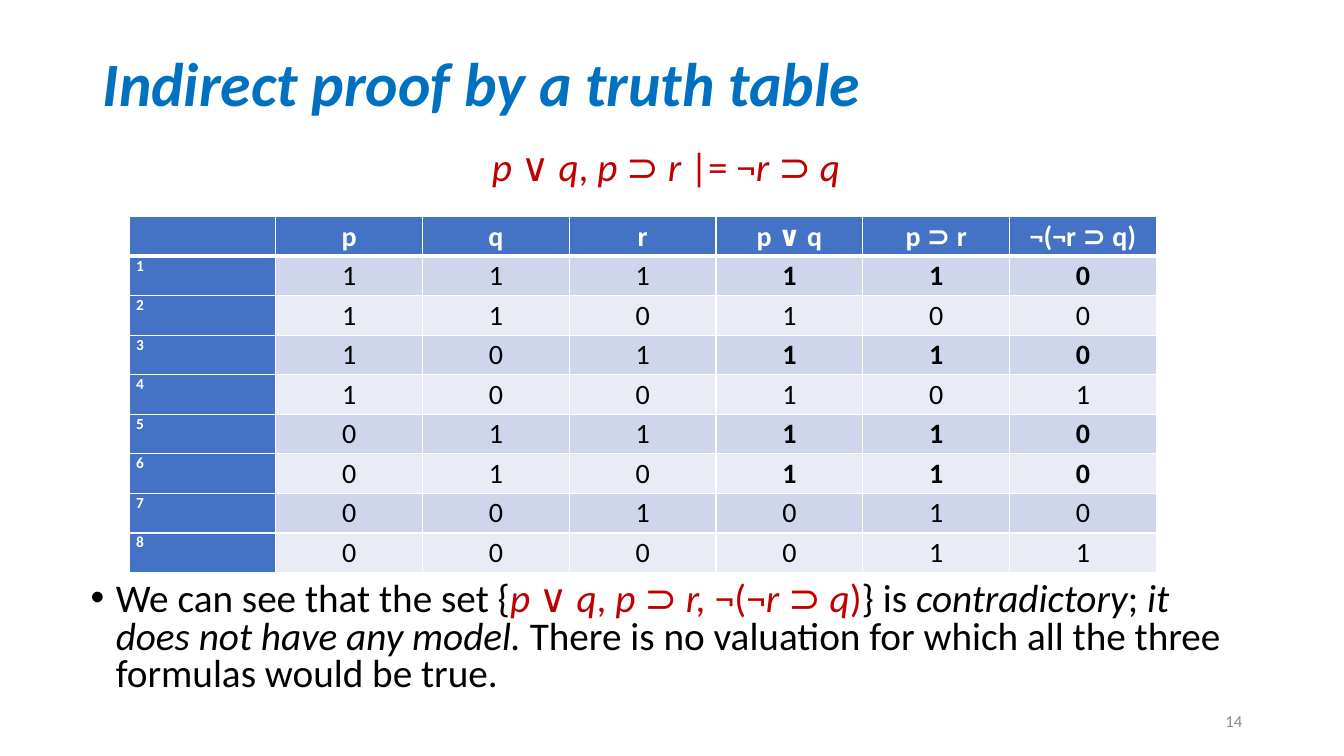
import itertools

import lxml.etree
import pptx
import pptx.dml.color
import pptx.enum.text
import pptx.oxml
import pptx.oxml.ns
import pptx.util

Inches, Pt = pptx.util.Inches, pptx.util.Pt
ALIGN, ANCHOR = pptx.enum.text.PP_ALIGN, pptx.enum.text.MSO_ANCHOR
qn = pptx.oxml.ns.qn

BLUE, RED, BLACK, WHITE = "4472C4", "C00000", "000000", "FFFFFF"
BANDS = ["CFD5EA", "E9EBF5"]


def rgb(value):
    return pptx.dml.color.RGBColor.from_string(value)


def add_text(box, parts, size, align=ALIGN.LEFT, anchor=ANCHOR.TOP, spacing=None, bold=None):
    """Fill a text box or cell from (text, colour) parts; * switches italics."""
    tf = box.text_frame
    tf.word_wrap = True
    tf.vertical_anchor = anchor
    p = tf.paragraphs[0]
    p.alignment = align
    p.line_spacing = spacing
    p.font.size = Pt(size)
    p.font.name = "Calibri"
    p.font.bold = bold
    for text, color in parts:
        for i, piece in enumerate(text.split("*")):
            if piece:
                r = p.add_run()
                r.text = piece
                r.font.italic = i % 2 == 1
                r.font.color.rgb = rgb(color)
    return p


prs = pptx.Presentation()
prs.slide_width, prs.slide_height = Inches(13.33), Inches(7.5)
s = prs.slides.add_slide(prs.slide_layouts[6])

# Title
box = s.shapes.add_textbox(Inches(0.92), Inches(0.4), Inches(11.5), Inches(0.91))
add_text(box, [("*Indirect proof by a truth table*", "0070C0")], 44,
         anchor=ANCHOR.MIDDLE, spacing=0.9, bold=True)

# Formula to prove
box = s.shapes.add_textbox(Inches(0.8), Inches(1.45), Inches(11.61), Inches(0.6))
p = add_text(box, [("*p *∨ *q*, *p *⊃ *r *|= ¬*r *⊃ *q*", RED)], 28, ALIGN.CENTER, spacing=0.8)
p.space_before = Pt(10)

# Truth table: values follow from p, q and r; rows with both premises true are bold
rows = [["", "p", "q", "r", "p ∨ q", "p ⊃ r", "¬(¬r ⊃ q)"]]
for number, (p_val, q_val, r_val) in enumerate(itertools.product((1, 0), repeat=3), 1):
    rows.append([number, p_val, q_val, r_val, p_val | q_val, (1 - p_val) | r_val,
                 (1 - r_val) & (1 - q_val)])

table = s.shapes.add_table(len(rows), len(rows[0]), Inches(1.28), Inches(2.15),
                           Inches(10.19), Inches(3.53)).table
for i, row in enumerate(rows):
    premises_hold = i > 0 and row[4] == row[5] == 1
    for j, value in enumerate(row):
        cell = table.cell(i, j)
        cell.margin_left = cell.margin_right = Inches(0.07)
        cell.margin_top = cell.margin_bottom = 0
        is_header = i == 0 or j == 0
        is_number = i > 0 and j == 0
        add_text(cell, [(str(value), WHITE if is_header else BLACK)],
                 11 if is_number else 20,
                 ALIGN.JUSTIFY if is_number else ALIGN.CENTER,
                 bold=is_header or (premises_hold and j > 3))
        cell.vertical_anchor = ANCHOR.TOP if is_number else ANCHOR.MIDDLE

        # White borders, thicker under the header row
        widths = {"lnL": 1, "lnR": 1, "lnT": 3 if i == 1 else 1, "lnB": 3 if i == 0 else 1}
        for side, width in widths.items():
            ln = lxml.etree.SubElement(cell._tc.get_or_add_tcPr(), qn("a:" + side), w=str(Pt(width)))
            fill = lxml.etree.SubElement(ln, qn("a:solidFill"))
            lxml.etree.SubElement(fill, qn("a:srgbClr"), val=WHITE)
        cell.fill.solid()
        cell.fill.fore_color.rgb = rgb(BLUE if is_header else BANDS[(i - 1) % 2])

# Conclusion
box = s.shapes.add_textbox(Inches(0.8), Inches(5.73), Inches(11.61), Inches(1.3))
p = add_text(box, [
    ("We can see that the set {", BLACK),
    ("*p *∨ *q*, *p *⊃ *r, *¬(¬*r *⊃ *q*)", RED),
    ("} is *contradictory*; *it does not have any model. *"
     "There is no valuation for which all the three formulas would be true.", BLACK),
], 28, spacing=0.8)
p.space_before = Pt(10)
pPr = p._p.get_or_add_pPr()
pPr.set("marL", str(Inches(0.25)))
pPr.set("indent", str(-Inches(0.25)))
bullet_font = pptx.oxml.parse_xml(
    '<a:buFont xmlns:a="http://schemas.openxmlformats.org/drawingml/2006/main" typeface="Arial"/>')
bullet = lxml.etree.Element(qn("a:buChar"), char="•")
defaults = pPr.find(qn("a:defRPr"))
defaults.addprevious(bullet_font)
defaults.addprevious(bullet)

# Slide number
box = s.shapes.add_textbox(Inches(9.42), Inches(6.95), Inches(3), Inches(0.4))
add_text(box, [("14", "8C8C8C")], 12, ALIGN.RIGHT, ANCHOR.MIDDLE)

prs.save("out.pptx")
